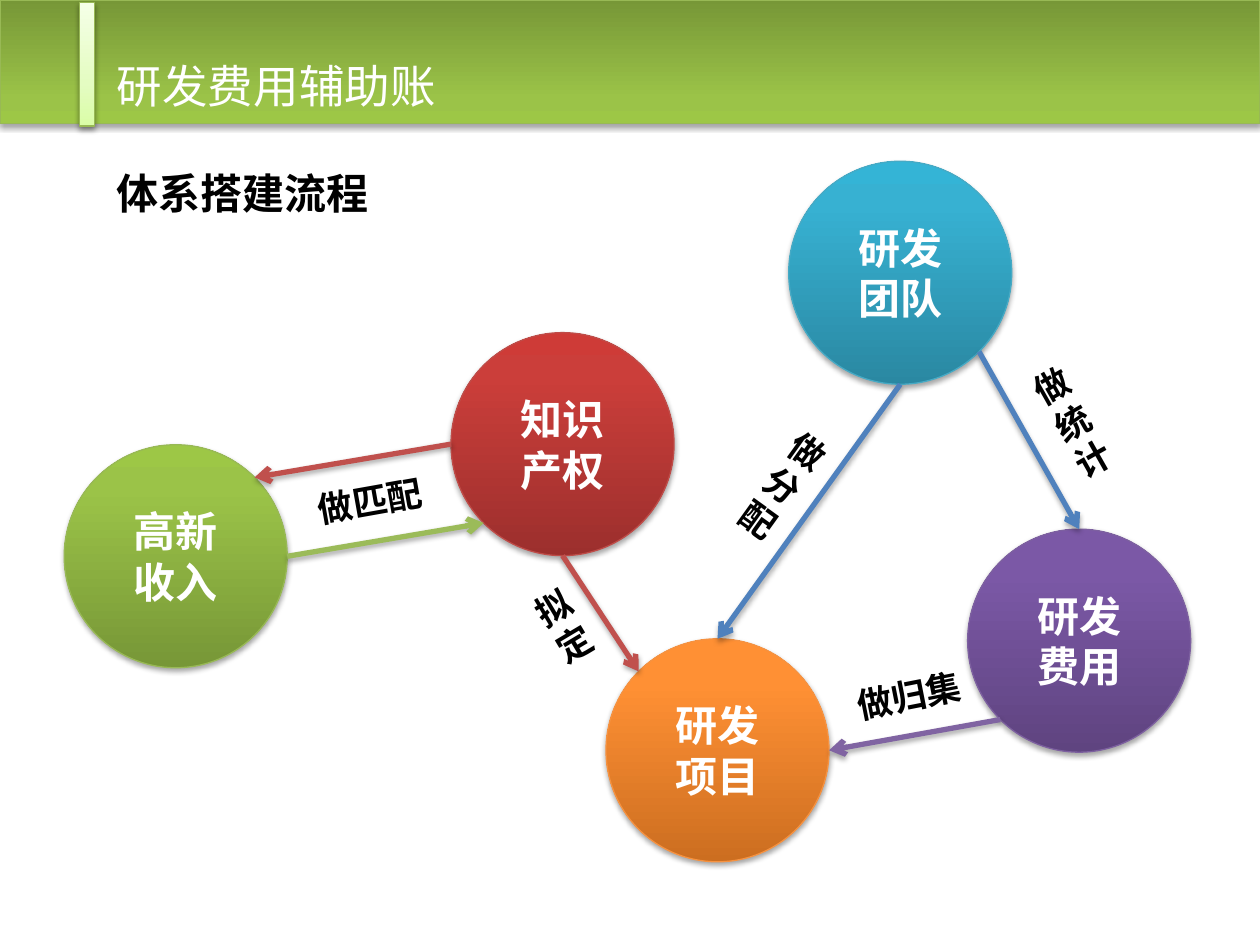
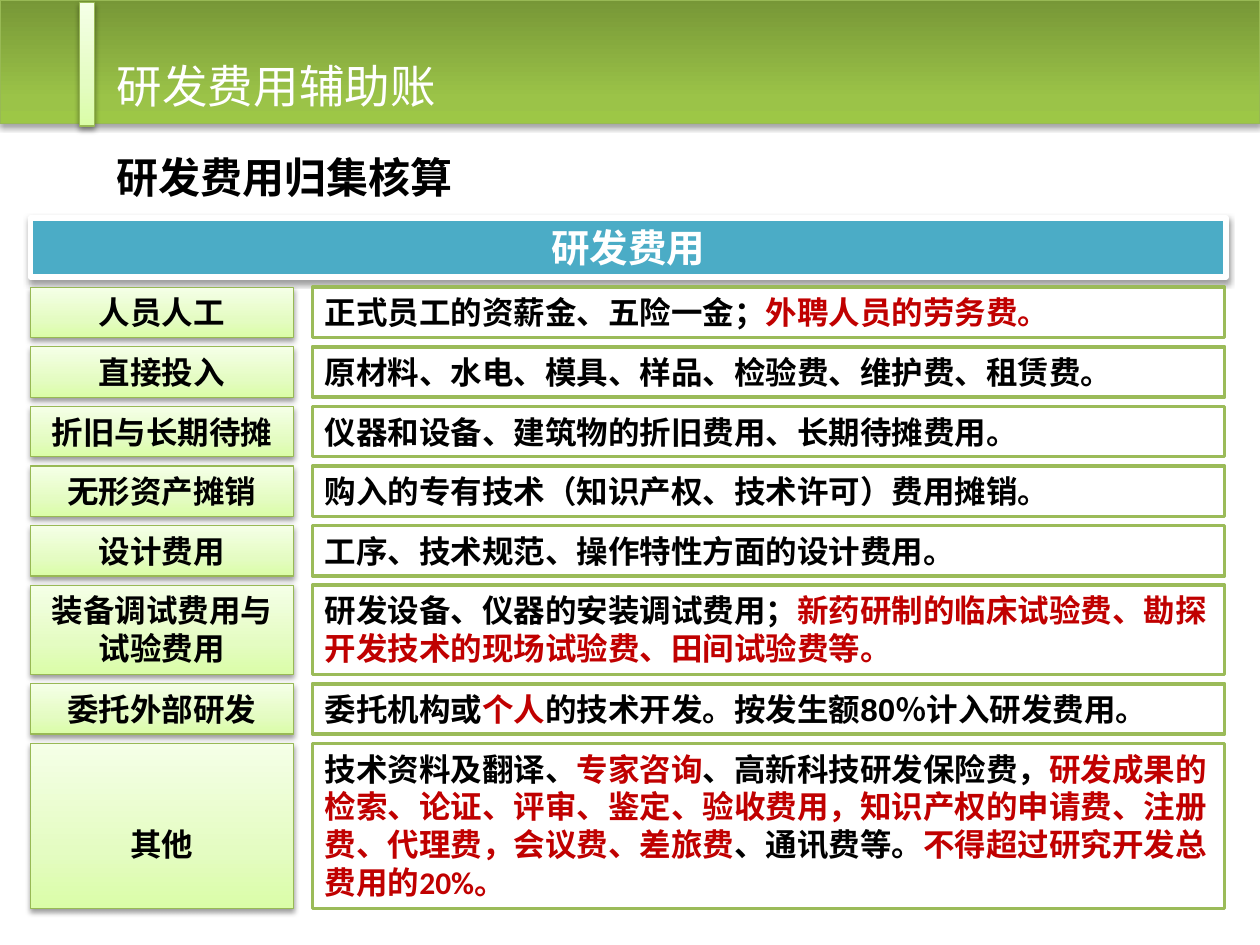
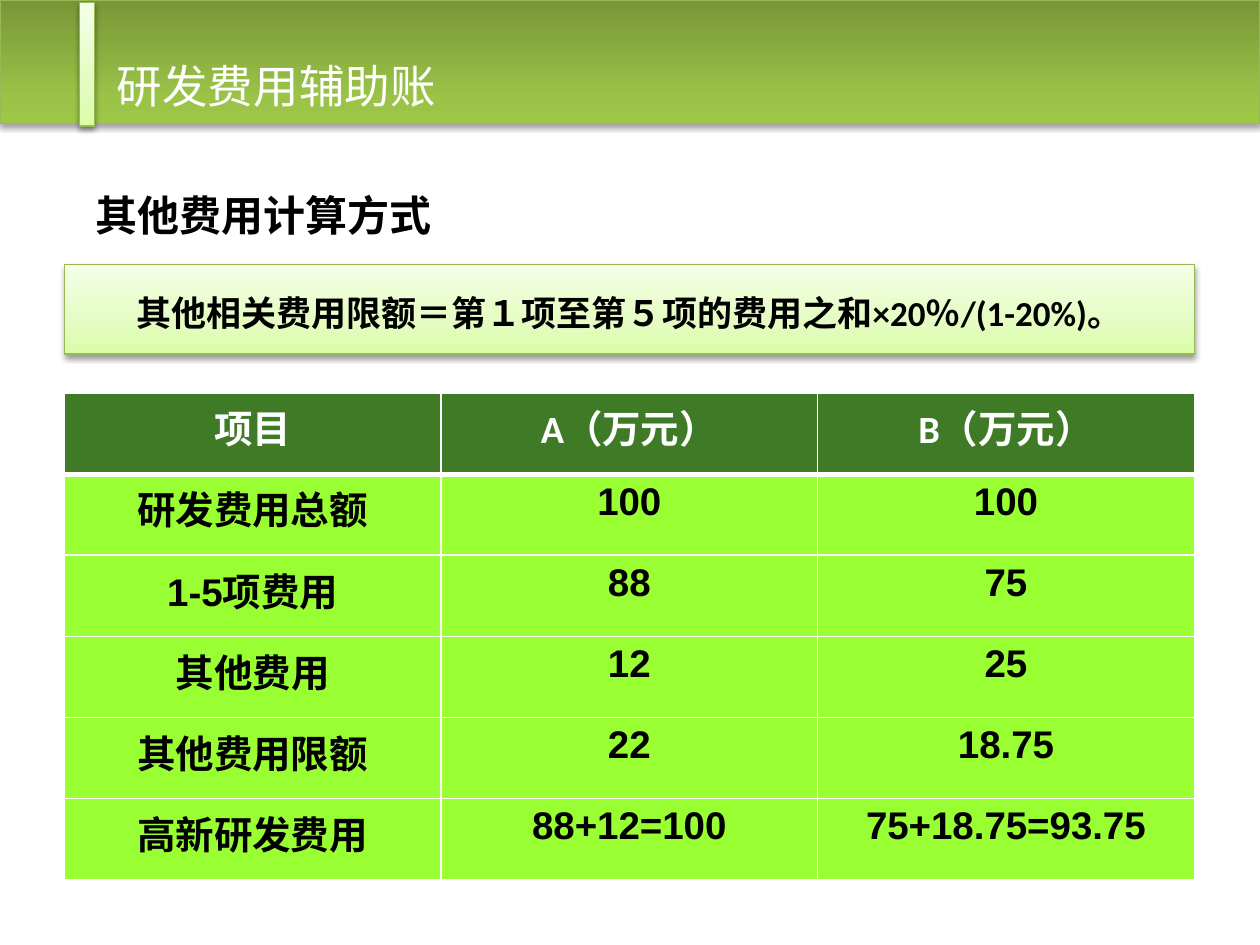
from math import cos, sin, radians
from lxml.etree import SubElement as Sub
from pptx import Presentation
from pptx.dml.color import RGBColor
from pptx.enum.shapes import MSO_CONNECTOR as Link, MSO_SHAPE as Kind
from pptx.enum.text import MSO_ANCHOR as Anchor, PP_ALIGN as Align
from pptx.oxml.ns import qn
from pptx.util import Pt

PX = 9144
BLACK, WHITE, RED, LIME = "000000", "FFFFFF", "C00000", "98B955"
NOTO = "Noto Sans CJK SC"
GREEN = [(0, "779737"), (80, "9BC348"), (100, "9DC746")]
PALE = [(0, "DAFDA7"), (35, "E4FCC2"), (100, "F5FFE7")]
TITLE = "研发费用辅助账"

SIZE = 177
CIRCLES = {
    "right": ("知识\n产权", 358, 264, [(0, "9C2F2D"), (80, "CB3E3A"), (100, "CE3B37")], "BF4C48"),
    "income": ("高新\n收入", 51, 353, GREEN, LIME),
    "project": ("研发\n项目", 481, 507, [(0, "CC6E20"), (80, "FF9034"), (100, "FF9136")], "F69240"),
    "team": ("研发\n团队", 626, 128, [(0, "2A88A2"), (80, "37B1D2"), (100, "34B4D6")], "46AAC5"),
    "cost": ("研发\n费用", 768, 420, [(0, "5F4480"), (80, "7B58A6"), (100, "7C57A8")], "7D60A0"),
}
ARROWS = [
    ("income", 0, "right", 135, "9BBB59"),
    ("right", 180, "income", 315, "C0504D"),
    ("right", 90, "project", 225, "C0504D"),
    ("team", 90, "project", 270, "4F81BD"),
    ("team", 45, "cost", 270, "4F81BD"),
    ("cost", 135, "project", 0, "8064A2"),
]
LABELS = [
    ("做匹配", (235, 376, 118, 44), 349.9, Align.CENTER),
    ("拟\n定", (424, 459, 44, 77), 329.2, Align.LEFT),
    ("做分配", (598, 329, 44, 111), 35.8, Align.LEFT),
    ("做统计", (828, 281, 44, 111), 330.5, Align.LEFT),
    ("做归集", (670, 530, 104, 44), 348.8, Align.LEFT),
]

ITEMS = [
    ("人员人工", 40, "正式员工的资薪金、五险一金；|外聘人员的劳务费。"),
    ("直接投入", 40, "原材料、水电、模具、样品、检验费、维护费、租赁费。"),
    ("折旧与长期待摊", 40, "仪器和设备、建筑物的折旧费用、长期待摊费用。"),
    ("无形资产摊销", 40, "购入的专有技术（知识产权、技术许可）费用摊销。"),
    ("设计费用", 40, "工序、技术规范、操作特性方面的设计费用。"),
    ("装备调试费用与试验费用", 71,
     "研发设备、仪器的安装调试费用；|新药研制的临床试验费、勘探开发技术的现场试验费、田间试验费等。"),
    ("委托外部研发", 40, "委托机构或|个人|的技术开发。按发生额80％计入研发费用。"),
    ("其他", 131,
     "技术资料及翻译、|专家咨询|、高新科技研发保险费，|研发成果的检索、论证、评审、鉴定、验收费用，"
     "知识产权的申请费、注册费、代理费，会议费、差旅费|、通讯费等。|不得超过研究开发总费用的20%。"),
]
TOP, BOTTOM = 228, 721

FORMULA = "其他相关费用限额＝第１项至第５项的费用之和×20％/(1-20%)。"
TABLE = [
    ("项目", "A（万元）", "B（万元）"),
    ("研发费用总额", "100", "100"),
    ("1-5项费用", "88", "75"),
    ("其他费用", "12", "25"),
    ("其他费用限额", "22", "18.75"),
    ("高新研发费用", "88+12=100", "75+18.75=93.75"),
]


def emu(*vals):
    return [round(v * PX) for v in vals]


def rgb(code):
    return RGBColor.from_string(code)


def style(run, size, color, font="Arial", bold=True, east="Calibri"):
    run.font.size, run.font.bold, run.font.name = Pt(size), bold, font
    run.font.color.rgb = rgb(color)
    props = run.font._element
    props.set("lang", "zh-CN")
    Sub(props, qn("a:ea")).set("typeface", east)


def write(frame, text, size, color=BLACK, align=Align.LEFT, anchor=Anchor.TOP, **look):
    frame.word_wrap, frame.vertical_anchor = True, anchor
    for i, line in enumerate(text.split("\n")):
        para = frame.paragraphs[0] if i == 0 else frame.add_paragraph()
        para.alignment = align
        for j, part in enumerate(line.split("|")):
            run = para.add_run()
            run.text = part
            style(run, size, RED if j % 2 else color, **look)


def label(slide, box, text, size, **look):
    item = slide.shapes.add_textbox(*emu(*box))
    write(item.text_frame, text, size, **look)
    return item


def shade(props, alpha):
    effects = props.find(qn("a:effectLst"))
    if effects is None:
        effects = Sub(props, qn("a:effectLst"))
    drop = Sub(effects, qn("a:outerShdw"), blurRad="40000", dist="22000",
               dir="5400000", rotWithShape="0")
    tone = Sub(drop, qn("a:srgbClr"), val=BLACK)
    Sub(tone, qn("a:alpha"), val=str(alpha * 1000))


def blend(props, stops):
    grad = Sub(props, qn("a:gradFill"), rotWithShape="1")
    steps = Sub(grad, qn("a:gsLst"))
    for place, color in stops:
        stop = Sub(steps, qn("a:gs"), pos=str(place * 1000))
        Sub(stop, qn("a:srgbClr"), val=color)
    Sub(grad, qn("a:lin"), ang="16200000", scaled="0")


def panel(slide, box, fill, line, width=0.75, kind=Kind.RECTANGLE, alpha=38):
    shape = slide.shapes.add_shape(kind, *emu(*box))
    props = shape._element.spPr
    if isinstance(fill, str):
        shape.fill.solid()
        shape.fill.fore_color.rgb = rgb(fill)
    else:
        blend(props, fill)
    shape.line.color.rgb = rgb(line)
    shape.line.width = Pt(width)
    shape.shadow.inherit = False
    if alpha:
        shade(props, alpha)
    return shape


def header(slide):
    band = panel(slide, (0, 0, 1000, 98), GREEN, LIME, alpha=35)
    band._element.spPr.xfrm.set("flipV", "1")
    panel(slide, (63, 2, 12, 98), PALE, LIME)
    label(slide, (83, 44, 339, 47), TITLE, 26, color=WHITE, anchor=Anchor.MIDDLE,
          font=NOTO, bold=False, east=NOTO)


def rim(name, angle):
    left, top = CIRCLES[name][1:3]
    half, turn = SIZE / 2, radians(angle)
    return emu(left + half + half * cos(turn), top + half + half * sin(turn))


def flow(slide):
    label(slide, (83, 128, 236, 50), "体系搭建流程", 24)
    for text, left, top, fill, line in CIRCLES.values():
        disc = panel(slide, (left, top, SIZE, SIZE), fill, line, kind=Kind.OVAL, alpha=35)
        write(disc.text_frame, text, 24, WHITE, Align.CENTER, Anchor.MIDDLE, font="Calibri")
    for start, out, end, into, color in ARROWS:
        arrow = slide.shapes.add_connector(Link.STRAIGHT, *rim(start, out), *rim(end, into))
        arrow.line.color.rgb = rgb(color)
        arrow.line.width = Pt(3)
        Sub(arrow.line._get_or_add_ln(), qn("a:tailEnd"), type="arrow")
        shade(arrow._element.spPr, 35)
    for text, box, turn, align in LABELS:
        label(slide, box, text, 20, align=align).rotation = turn


def costs(slide):
    label(slide, (83, 115, 496, 50), "研发费用归集核算", 24)
    head = panel(slide, (24, 173, 949, 47), "4BACC6", WHITE, 3)
    write(head.text_frame, "研发费用", 22, WHITE, Align.CENTER)
    gap = (BOTTOM - TOP - sum(item[1] for item in ITEMS)) / (len(ITEMS) - 1)
    top = TOP
    for name, high, text in ITEMS:
        tag = panel(slide, (24, top, 209, high), PALE, LIME)
        write(tag.text_frame, name, 18, align=Align.CENTER)
        if name == "其他":
            tag.text_frame.margin_top, = emu(65)
        note = panel(slide, (248, top, 724, high), WHITE, "9BBB59", 2, alpha=0)
        write(note.text_frame, text, 18, font="Calibri" if name == "其他" else "Arial")
        top += high + gap


def edge(cell, row):
    props = cell._tc.get_or_add_tcPr()
    thick = {"T": row == 1, "B": row == 0}
    for side in "LRTB":
        line = Sub(props, qn("a:ln" + side), w=str(Pt(3 if thick.get(side) else 1)))
        Sub(Sub(line, qn("a:solidFill")), qn("a:srgbClr"), val=WHITE)


def limit(slide):
    box = panel(slide, (51, 210, 897, 71), PALE, LIME)
    write(box.text_frame, FORMULA, 20, align=Align.CENTER, font="Calibri")
    box.text_frame.paragraphs[0].line_spacing = 1.5
    label(slide, (66, 116, 851, 109), "其他费用计算方式", 24, anchor=Anchor.MIDDLE, font="Calibri")
    grid = slide.shapes.add_table(len(TABLE), 3, *emu(51, 312, 897, 386)).table
    for i, row in enumerate(TABLE):
        for j, text in enumerate(row):
            cell = grid.cell(i, j)
            edge(cell, i)
            cell.fill.solid()
            cell.fill.fore_color.rgb = rgb("99FF33" if i else "3F7B27")
            write(cell.text_frame, text, 22, BLACK if i else WHITE, Align.CENTER,
                  font="Arial" if i else "Calibri", east=NOTO)


def main():
    deck = Presentation()
    deck.slide_width, deck.slide_height = emu(1000, 750)
    for build in (flow, costs, limit):
        slide = deck.slides.add_slide(deck.slide_layouts[6])
        build(slide)
        header(slide)
    deck.save("out.pptx")


if __name__ == "__main__":
    main()
